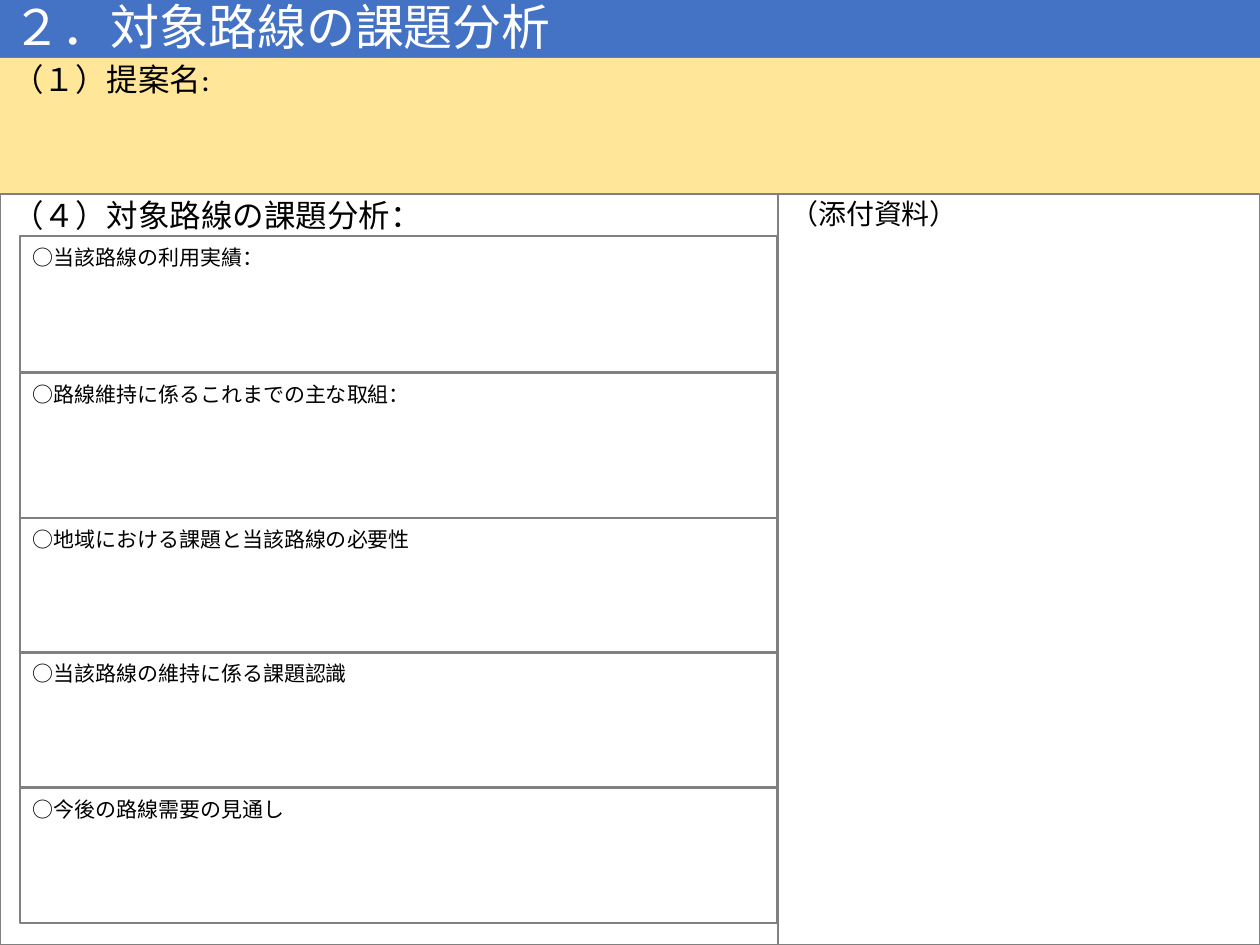
from dataclasses import dataclass

import pptx
import pptx.dml.color
import pptx.enum.shapes
import pptx.enum.text
import pptx.util

PX = 914400 // 126  # EMU in one px
FONT = "Calibri"
GREY = "808080"


@dataclass
class Box:
    text: str
    left: int
    top: int
    width: int
    height: int
    size: int
    fill: str = ""
    line: float = 0
    space: float = 0.9


def color(code: str) -> pptx.dml.color.RGBColor:
    return pptx.dml.color.RGBColor.from_string(code)


def place(shape, left: int, top: int, width: int, height: int) -> None:
    shape.left, shape.top = left * PX, top * PX
    shape.width, shape.height = width * PX, height * PX


def write(shape, text: str, size: int, ink: str, space: float) -> None:
    frame = shape.text_frame
    frame.text = text
    frame.word_wrap = True
    frame.auto_size = pptx.enum.text.MSO_AUTO_SIZE.NONE
    para = frame.paragraphs[0]
    para.alignment = pptx.enum.text.PP_ALIGN.LEFT
    para.line_spacing = space
    font = para.runs[0].font
    font.name = FONT
    font.size = pptx.util.Pt(size)
    font.color.rgb = color(ink)


def draw(slide, box: Box) -> None:
    shape = slide.shapes.add_shape(
        pptx.enum.shapes.MSO_SHAPE.RECTANGLE, 0, 0, PX, PX)
    place(shape, box.left, box.top, box.width, box.height)
    shape.shadow.inherit = False
    if box.fill:
        shape.fill.solid()
        shape.fill.fore_color.rgb = color(box.fill)
    else:
        shape.fill.background()
    if box.line:
        shape.line.color.rgb = color(GREY)
        shape.line.width = pptx.util.Pt(box.line)
    else:
        shape.line.fill.background()
    write(shape, box.text, box.size, "000000", box.space)
    shape.text_frame.vertical_anchor = pptx.enum.text.MSO_ANCHOR.TOP
    shape.text_frame.paragraphs[0].space_before = pptx.util.Pt(10)


def main() -> None:
    deck = pptx.Presentation()
    deck.slide_width, deck.slide_height = 1260 * PX, 945 * PX
    slide = deck.slides.add_slide(deck.slide_layouts[5])

    # Title bar
    title = slide.shapes.title
    place(title, 0, 0, 1260, 59)
    title.fill.solid()
    title.fill.fore_color.rgb = color("4472C4")
    write(title, "２．対象路線の課題分析", 28, "FFFFFF", 0.9)
    title.text_frame.vertical_anchor = pptx.enum.text.MSO_ANCHOR.MIDDLE

    # Main panels
    draw(slide, Box("（４）対象路線の課題分析：", 0, 194, 778, 751, 18, line=1))
    draw(slide, Box("（添付資料）", 778, 194, 482, 751, 16, line=0.75))

    # Topic rows: text, top, height
    topics = [
        ("○当該路線の利用実績：", 236, 136),
        ("○路線維持に係るこれまでの主な取組：", 373, 145),
        ("○地域における課題と当該路線の必要性", 518, 135),
        ("○当該路線の維持に係る課題認識", 652, 135),
        ("○今後の路線需要の見通し", 788, 135),
    ]
    for text, top, height in topics:
        draw(slide, Box(text, 20, top, 757, height, 12, line=0.75, space=1.1))

    # Proposal name band
    draw(slide, Box("（１）提案名:", 0, 58, 1260, 135, 18, fill="FFE699"))

    deck.save("out.pptx")


if __name__ == "__main__":
    main()
